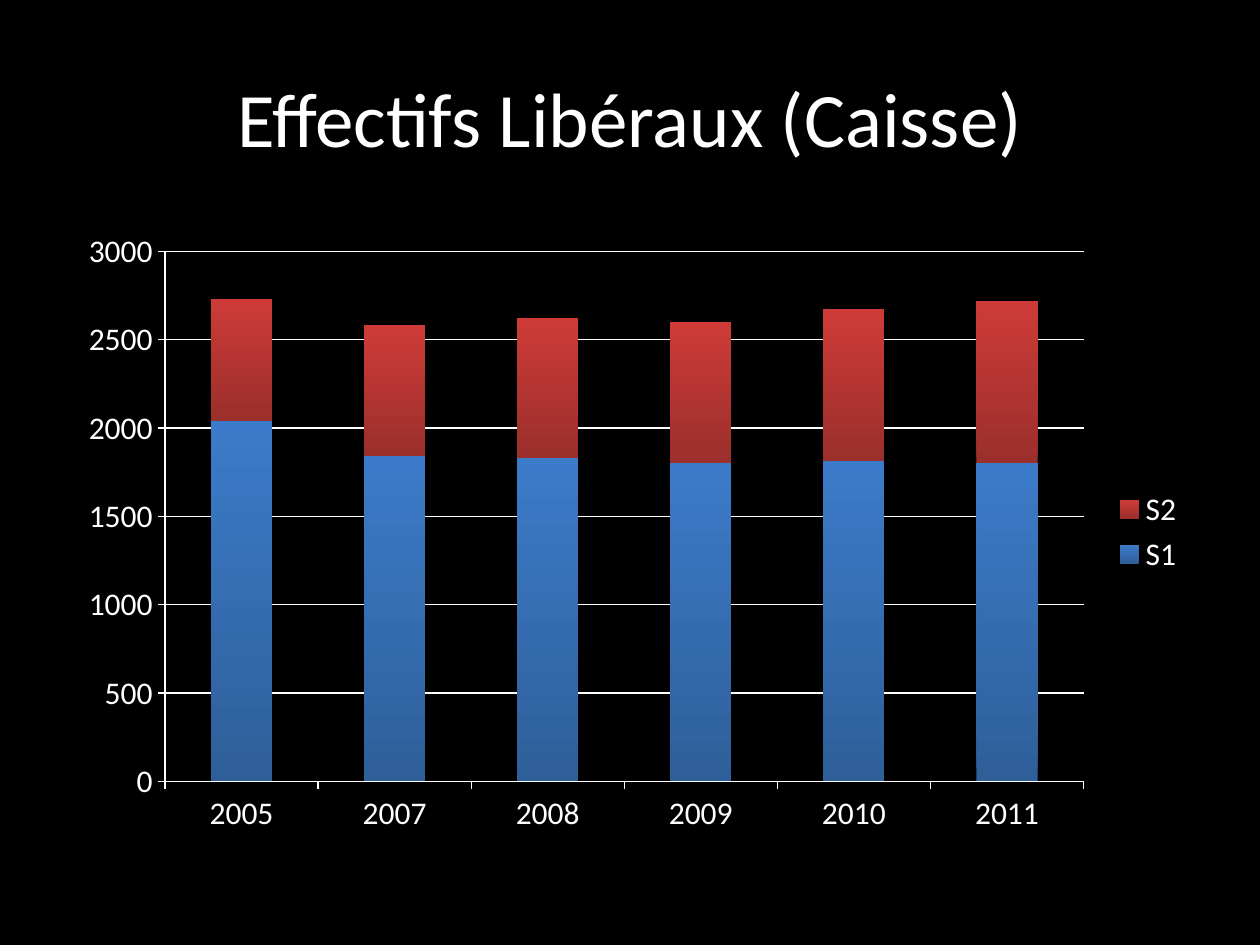
"""Build a slide with a stacked column chart of liberal practitioners by sector."""
from lxml import etree
from pptx import Presentation
from pptx import util as u
from pptx.chart import data as cd
from pptx.dml.color import RGBColor
from pptx.enum import chart as ch, text
from pptx.oxml import ns

HUES = {"back": "000000", "text": "FFFFFF"}
BARS = {
    "S1": ((2040, 1840, 1830, 1800, 1810, 1800), ("2E5F99", "3C7BC9")),
    "S2": ((690, 740, 790, 800, 860, 920), ("9B2F2C", "CE3B37")),
}
YEARS = ("2005", "2007", "2008", "2009", "2010", "2011")
PLOT = {"x": 0.09, "y": 0.05, "w": 0.81, "h": 0.85}
FACE = "Calibri"


def px(*nums):
    return [u.Emu(round(n * 914400 / 126)) for n in nums]


def style(font, size):
    font.name, font.size = FACE, u.Pt(size)
    font.color.rgb = RGBColor.from_string(HUES["text"])


deck = Presentation()
deck.slide_width, deck.slide_height = px(1260, 945)
slide = deck.slides.add_slide(deck.slide_layouts[6])
slide.background.fill.solid()
slide.background.fill.fore_color.rgb = RGBColor.from_string(HUES["back"])

frame = slide.shapes.add_textbox(*px(63, 38, 1134, 158)).text_frame
frame.word_wrap = True
frame.vertical_anchor = text.MSO_ANCHOR.MIDDLE
para = frame.paragraphs[0]
para.alignment = text.PP_ALIGN.CENTER
run = para.add_run()
run.text = "Effectifs Libéraux (Caisse)"
style(run.font, 44)

data = cd.CategoryChartData()
data.categories = YEARS
for name, (vals, _) in BARS.items():
    data.add_series(name, vals)
chart = slide.shapes.add_chart(
    ch.XL_CHART_TYPE.COLUMN_STACKED, *px(63, 220, 1134, 624), data).chart
style(chart.font, 18)
chart.has_title = False
chart.has_legend = True
chart.legend.position = ch.XL_LEGEND_POSITION.RIGHT
chart.legend.include_in_layout = False

plot = chart.plots[0]
plot.gap_width, plot.overlap = 150, 100
plot.vary_by_categories = False
for bar in plot.series:
    fill = bar.format.fill
    fill.gradient()
    fill.gradient_angle = 90
    for stop, hue in zip(fill.gradient_stops, BARS[bar.name][1]):
        stop.color.rgb = RGBColor.from_string(hue)

rise = chart.value_axis
rise.minimum_scale, rise.maximum_scale, rise.major_unit = 0, 3000, 500
rise.has_major_gridlines = True
for axis in (rise, chart.category_axis):
    axis.major_tick_mark = ch.XL_TICK_MARK.OUTSIDE
    axis.minor_tick_mark = ch.XL_TICK_MARK.NONE
for part in (rise, rise.major_gridlines, chart.category_axis):
    line = part.format.line
    line.color.rgb = RGBColor.from_string(HUES["text"])
    line.width = u.Pt(0.75)

area = chart._chartSpace.chart.plotArea
for old in area.findall(ns.qn("c:layout")):
    area.remove(old)
lay = etree.Element(ns.qn("c:layout"))
area.insert(0, lay)
hand = etree.SubElement(lay, ns.qn("c:manualLayout"))
tags = {"layoutTarget": "inner", "xMode": "edge", "yMode": "edge", **PLOT}
for tag, val in tags.items():
    etree.SubElement(hand, ns.qn("c:" + tag)).set("val", str(val))

deck.save("out.pptx")
